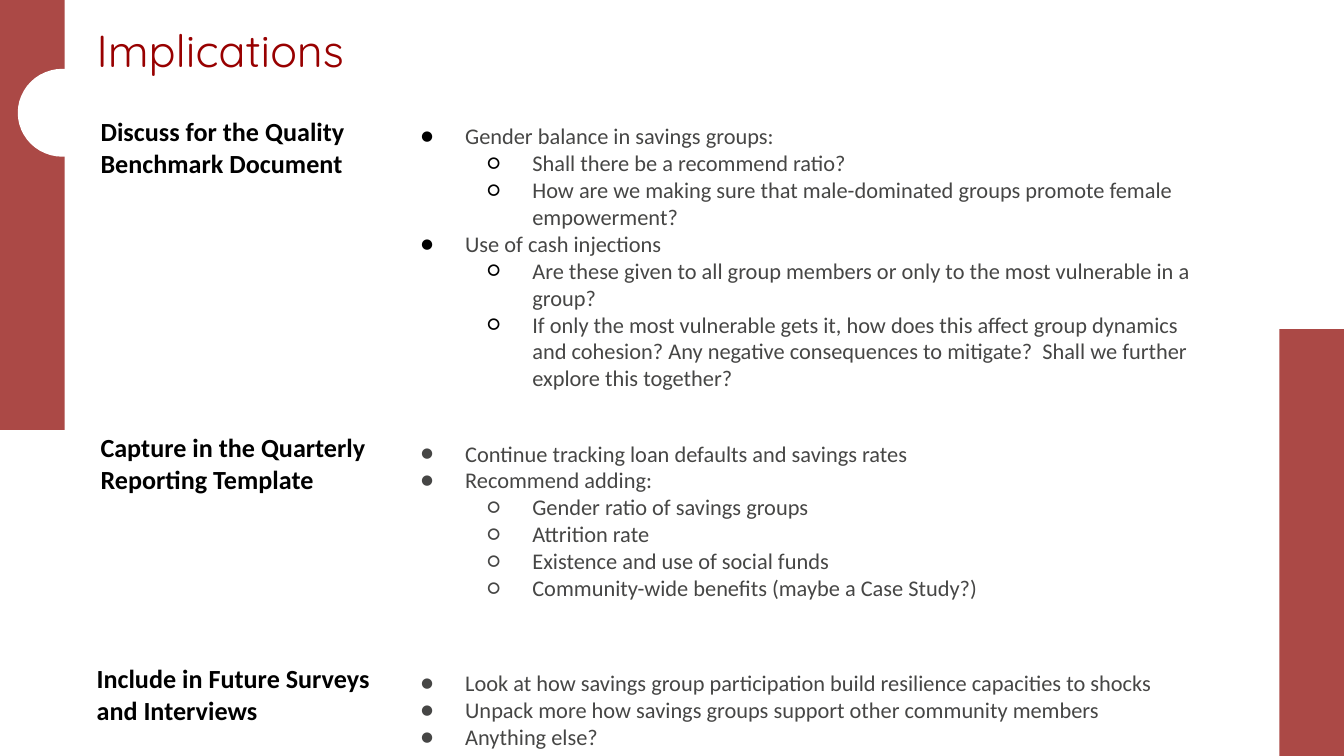
import pptx
import pptx.util
import pptx.dml.color
import pptx.enum.shapes
import pptx.enum.text
import pptx.oxml
import pptx.oxml.ns

Pt = pptx.util.Pt
SHAPES = pptx.enum.shapes.MSO_SHAPE
ANCHORS = pptx.enum.text.MSO_ANCHOR

COLORS = {"band": "AB4946", "paper": "FFFFFF", "title": "980000",
          "heading": "000000", "body": "464645"}

TITLE = "Implications"
SECTIONS = [
    {"heading": "Discuss for the Quality Benchmark Document",
     "heading_box": (46.8, 54.7, 178, 67), "points_top": 60.5, "bullet": "heading",
     "points": [
         (0, "Gender balance in savings groups:"),
         (1, "Shall there be a recommend ratio?"),
         (1, "How are we making sure that male-dominated groups promote female empowerment?"),
         (0, "Use of cash injections"),
         (1, "Are these given to all group members or only to the most vulnerable in a group?"),
         (1, "If only the most vulnerable gets it, how does this affect group dynamics and "
             "cohesion? Any negative consequences to mitigate?  Shall we further explore "
             "this together?")]},
    {"heading": "Capture in the Quarterly Reporting Template",
     "heading_box": (46.8, 224, 158, 53), "points_top": 230.4, "bullet": "body",
     "points": [
         (0, "Continue tracking loan defaults and savings rates"),
         (0, "Recommend adding:"),
         (1, "Gender ratio of savings groups"),
         (1, "Attrition rate"),
         (1, "Existence and use of social funds"),
         (1, "Community-wide benefits (maybe a Case Study?)")]},
    {"heading": "Include in Future Surveys and Interviews",
     "heading_box": (44.7, 347.8, 161, 42), "points_top": 353.5, "bullet": "body",
     "points": [
         (0, "Look at how savings group participation build resilience capacities to shocks"),
         (0, "Unpack more how savings groups support other community members"),
         (0, "Anything else?")]},
]
DECORATION = [
    (SHAPES.RECTANGLE, (0, 0, 34.6, 230.4), "band"),
    (SHAPES.RECTANGLE, (685.4, 176.4, 34.6, 230.4), "band"),
    (SHAPES.OVAL, (10, 37.4, 46.8, 46.1), "paper"),
]
BULLETS = "●○"
INDENT, HANGING = 36, 24


def rgb(name):
    return pptx.dml.color.RGBColor.from_string(COLORS[name])


def add_decoration(slide, kind, box, color):
    shape = slide.shapes.add_shape(kind, *map(Pt, box))
    shape.shadow.inherit = False
    shape.fill.solid()
    shape.fill.fore_color.rgb = rgb(color)
    if color == "paper":
        shape.line.color.rgb = rgb(color)
        shape.line.width = Pt(1)
    else:
        shape.line.fill.background()


def add_text(slide, box, lines, size, font, color, inset, bold=False):
    frame = slide.shapes.add_textbox(*map(Pt, box)).text_frame
    frame.word_wrap = True
    frame.margin_left = frame.margin_right = Pt(inset)
    frame.margin_top = frame.margin_bottom = Pt(inset)
    frame.text = "\n".join(lines)
    for paragraph in frame.paragraphs:
        for run in paragraph.runs:
            run.font.size = Pt(size)
            run.font.name = font
            run.font.bold = bold
            run.font.color.rgb = rgb(color)
    return frame


def add_bullet(paragraph, level, color):
    paragraph.level = level
    properties = paragraph._p.get_or_add_pPr()
    properties.set("marL", str(Pt(INDENT * (level + 1))))
    properties.set("indent", str(-Pt(HANGING)))
    namespace = pptx.oxml.ns.nsdecls("a")
    for xml in (f'<a:buClr {namespace}><a:srgbClr val="{COLORS[color]}"/></a:buClr>',
                f'<a:buFont {namespace} typeface="Calibri"/>',
                f'<a:buChar {namespace} char="{BULLETS[level]}"/>'):
        properties.append(pptx.oxml.parse_xml(xml))


def main():
    deck = pptx.Presentation()
    deck.slide_width, deck.slide_height = Pt(720), Pt(405)
    slide = deck.slides.add_slide(deck.slide_layouts[6])

    for kind, box, color in DECORATION:
        add_decoration(slide, kind, box, color)

    title = add_text(slide, (46.8, 9.4, 595, 38), [TITLE], 24, "Quicksand", "title", 5)
    title.margin_top = title.margin_bottom = Pt(2.7)
    title.vertical_anchor = ANCHORS.MIDDLE
    title.paragraphs[0].line_spacing = 0.9

    for section in SECTIONS:
        add_text(slide, section["heading_box"], [section["heading"]],
                 14, "Calibri", "heading", 7.2, bold=True)
        points = add_text(slide, (208, section["points_top"], 438.5, 53),
                          [text for _, text in section["points"]],
                          12, "Calibri", "body", 5.2)
        for paragraph, (level, _) in zip(points.paragraphs, section["points"]):
            add_bullet(paragraph, level, section["bullet"])

    deck.save("out.pptx")


if __name__ == "__main__":
    main()
